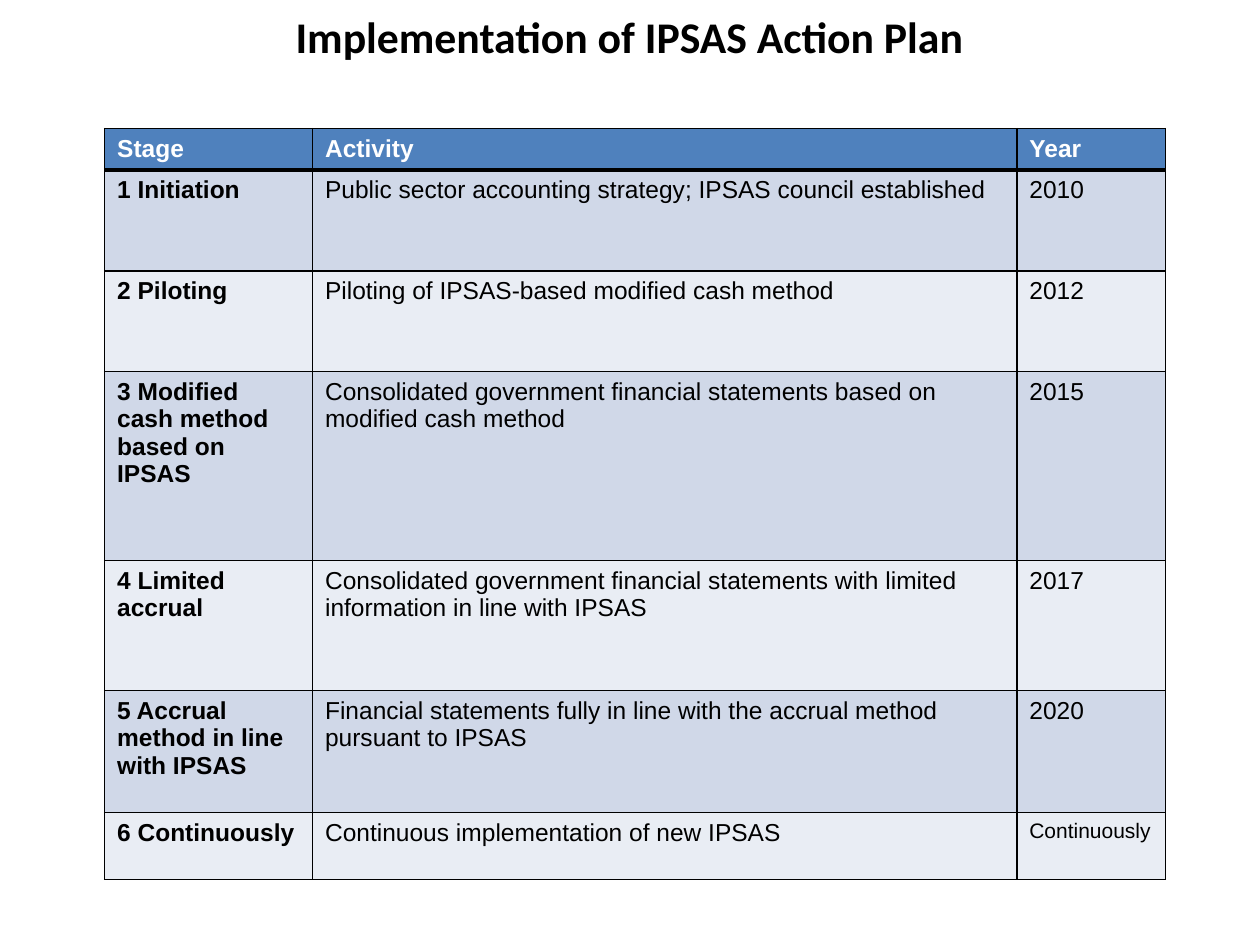
import lxml.etree
import pptx
import pptx.dml.color
import pptx.enum.text
import pptx.oxml.ns
import pptx.util

Inches = pptx.util.Inches
Pt = pptx.util.Pt
RGBColor = pptx.dml.color.RGBColor

BLACK = RGBColor(0x00, 0x00, 0x00)
WHITE = RGBColor(0xFF, 0xFF, 0xFF)
HEADER_BLUE = RGBColor(0x4F, 0x81, 0xBD)
BANDS = (RGBColor(0xD0, 0xD8, 0xE8), RGBColor(0xE9, 0xED, 0xF4))

TITLE_BOX = (Inches(0.58), Inches(0.03), Inches(8.83), Inches(0.94))
TABLE_BOX = (Inches(0.83), Inches(1.02), Inches(8.43), Inches(5.96))
COLUMN_WIDTHS = (1.65, 5.59, 1.18)
ROW_HEIGHTS = (0.33, 0.8, 0.8, 1.5, 1.03, 0.97, 0.53)

PLAN = (
    ("Stage", "Activity", "Year"),
    ("1 Initiation",
     "Public sector accounting strategy; IPSAS council established", "2010"),
    ("2 Piloting", "Piloting of IPSAS-based modified cash method", "2012"),
    ("3 Modified cash method based on IPSAS",
     "Consolidated government financial statements based on modified cash method",
     "2015"),
    ("4 Limited accrual",
     "Consolidated government financial statements with limited information "
     "in line with IPSAS", "2017"),
    ("5 Accrual method in line with IPSAS",
     "Financial statements fully in line with the accrual method pursuant to IPSAS",
     "2020"),
    ("6 Continuously", "Continuous implementation of new IPSAS", "Continuously"),
)


def format_text(frame, font_name, size, color, bold):
    for para in frame.paragraphs:
        for span in para.runs:
            span.font.name = font_name
            span.font.size = Pt(size)
            span.font.color.rgb = color
            span.font.bold = bold


def add_borders(cell, **widths):
    """Draw black cell borders; widths in points, keyed L, R, T and B."""
    qn = pptx.oxml.ns.qn
    properties = cell._tc.get_or_add_tcPr()
    for side in "LRTB":
        line = lxml.etree.SubElement(
            properties, qn(f"a:ln{side}"), w=str(Pt(widths.get(side, 1))))
        fill = lxml.etree.SubElement(line, qn("a:solidFill"))
        lxml.etree.SubElement(fill, qn("a:srgbClr"), val=str(BLACK))


def add_title(page, box):
    title = page.shapes.title
    title.left, title.top, title.width, title.height = box
    frame = title.text_frame
    frame.text = "Implementation of IPSAS Action Plan"
    frame.vertical_anchor = pptx.enum.text.MSO_ANCHOR.TOP
    frame.paragraphs[0].alignment = pptx.enum.text.PP_ALIGN.CENTER
    format_text(frame, "Calibri", 25, BLACK, True)


def add_plan_table(page, box):
    table = page.shapes.add_table(len(PLAN), len(COLUMN_WIDTHS), *box).table
    for column, width in zip(table.columns, COLUMN_WIDTHS):
        column.width = Inches(width)
    for row, height in zip(table.rows, ROW_HEIGHTS):
        row.height = Inches(height)

    for row_index, texts in enumerate(PLAN):
        header = row_index == 0
        for column_index, text in enumerate(texts):
            cell = table.cell(row_index, column_index)
            cell.text_frame.text = text
            long_year = column_index == 2 and text == "Continuously"
            format_text(cell.text_frame, "Arial", 12 if long_year else 14,
                        WHITE if header else BLACK,
                        header or column_index == 0)
            add_borders(cell, T=3 if row_index == 1 else 1, B=3 if header else 1)
            cell.fill.solid()
            cell.fill.fore_color.rgb = (
                HEADER_BLUE if header else BANDS[(row_index - 1) % 2])


def main():
    deck = pptx.Presentation()
    deck.slide_width, deck.slide_height = Inches(10), Inches(7.5)
    page = deck.slides.add_slide(deck.slide_layouts.get_by_name("Title Only"))
    add_title(page, TITLE_BOX)
    add_plan_table(page, TABLE_BOX)
    deck.save("out.pptx")


if __name__ == "__main__":
    main()
